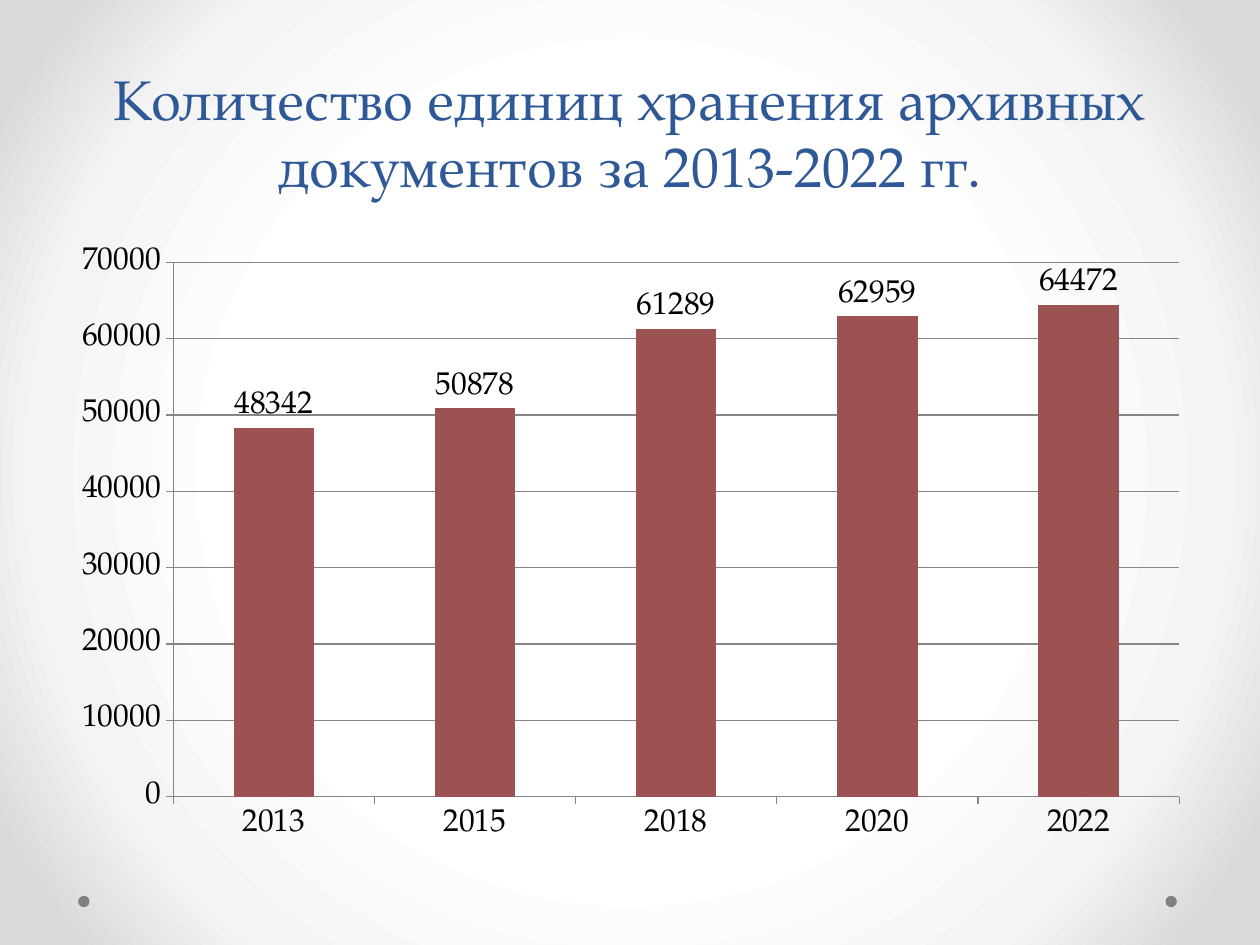
import pptx
import pptx.chart.data
import pptx.dml.color
import pptx.enum.chart
import pptx.enum.shapes
import pptx.enum.text
import pptx.oxml
import pptx.oxml.ns
import pptx.util

Inches = pptx.util.Inches
Pt = pptx.util.Pt
FONT = "TeX Gyre Pagella"
COLORS = {"title": "2F5897", "bar": "9C5252", "text": "000000",
          "grid": "868686", "dot": "808080"}
STOPS = [(50, "FFFFFF"), (76, "F4F4F4"), (92, "DADADA")]
UNITS = {"2013": 48342, "2015": 50878, "2018": 61289,
         "2020": 62959, "2022": 64472}


def rgb(name):
    return pptx.dml.color.RGBColor.from_string(COLORS[name])


def style(font, size, color):
    font.name = FONT
    font.size = Pt(size)
    font.color.rgb = rgb(color)


def add_glow(slide):
    """Fill the background with a gradient running out from the centre."""
    slide.background.fill.solid()
    solid = slide.element.find(".//" + pptx.oxml.ns.qn("a:solidFill"))
    stops = "".join(
        f'<a:gs pos="{pos * 1000}"><a:srgbClr val="{color}"/></a:gs>'
        for pos, color in STOPS)
    glow = pptx.oxml.parse_xml(
        f'<a:gradFill {pptx.oxml.ns.nsdecls("a")} rotWithShape="1">'
        f'<a:gsLst>{stops}</a:gsLst><a:path path="circle">'
        '<a:fillToRect l="50000" t="50000" r="50000" b="50000"/>'
        '</a:path></a:gradFill>')
    solid.getparent().replace(solid, glow)


def add_dot(slide, left):
    dot = slide.shapes.add_shape(
        pptx.enum.shapes.MSO_SHAPE.OVAL,
        Inches(left), Inches(7.11), Inches(0.09), Inches(0.09))
    dot.shadow.inherit = False
    dot.fill.solid()
    dot.fill.fore_color.rgb = rgb("dot")
    dot.line.fill.background()


def set_title(slide, text):
    title = slide.shapes.title
    title.left, title.top = Inches(0), Inches(0.29)
    title.width, title.height = Inches(10), Inches(1.34)
    frame = title.text_frame
    frame.word_wrap = True
    frame.vertical_anchor = pptx.enum.text.MSO_ANCHOR.BOTTOM
    para = frame.paragraphs[0]
    para.alignment = pptx.enum.text.PP_ALIGN.CENTER
    run = para.add_run()
    run.text = text
    style(run.font, 32, "title")


def set_line(line):
    line.color.rgb = rgb("grid")
    line.width = Pt(0.75)


def add_bars(slide):
    data = pptx.chart.data.CategoryChartData()
    data.categories = list(UNITS)
    data.add_series("Series 1", list(UNITS.values()))
    chart = slide.shapes.add_chart(
        pptx.enum.chart.XL_CHART_TYPE.COLUMN_CLUSTERED,
        Inches(0.47), Inches(1.86), Inches(9.07), Inches(4.91), data).chart
    chart.has_title = False
    chart.has_legend = False
    style(chart.font, 18, "text")
    for axis in (chart.category_axis, chart.value_axis):
        axis.major_tick_mark = pptx.enum.chart.XL_TICK_MARK.OUTSIDE
        set_line(axis.format.line)
    scale = chart.value_axis
    scale.minimum_scale, scale.maximum_scale = 0, 70000
    scale.major_unit = 10000
    scale.has_major_gridlines = True
    set_line(scale.major_gridlines.format.line)

    plot = chart.plots[0]
    plot.gap_width = 150
    plot.vary_by_categories = False
    bars = plot.series[0]
    bars.format.fill.solid()
    bars.format.fill.fore_color.rgb = rgb("bar")
    labels = bars.data_labels
    labels.show_value = True
    labels.position = pptx.enum.chart.XL_LABEL_POSITION.OUTSIDE_END
    style(labels.font, 18, "text")


def main():
    deck = pptx.Presentation()
    deck.slide_width, deck.slide_height = Inches(10), Inches(7.5)
    slide = deck.slides.add_slide(deck.slide_layouts[5])
    add_glow(slide)
    for left in (9.25, 0.62):
        add_dot(slide, left)
    set_title(slide, "Количество единиц хранения архивных документов "
                     "за 2013-2022 гг.")
    add_bars(slide)
    deck.save("out.pptx")


if __name__ == "__main__":
    main()
